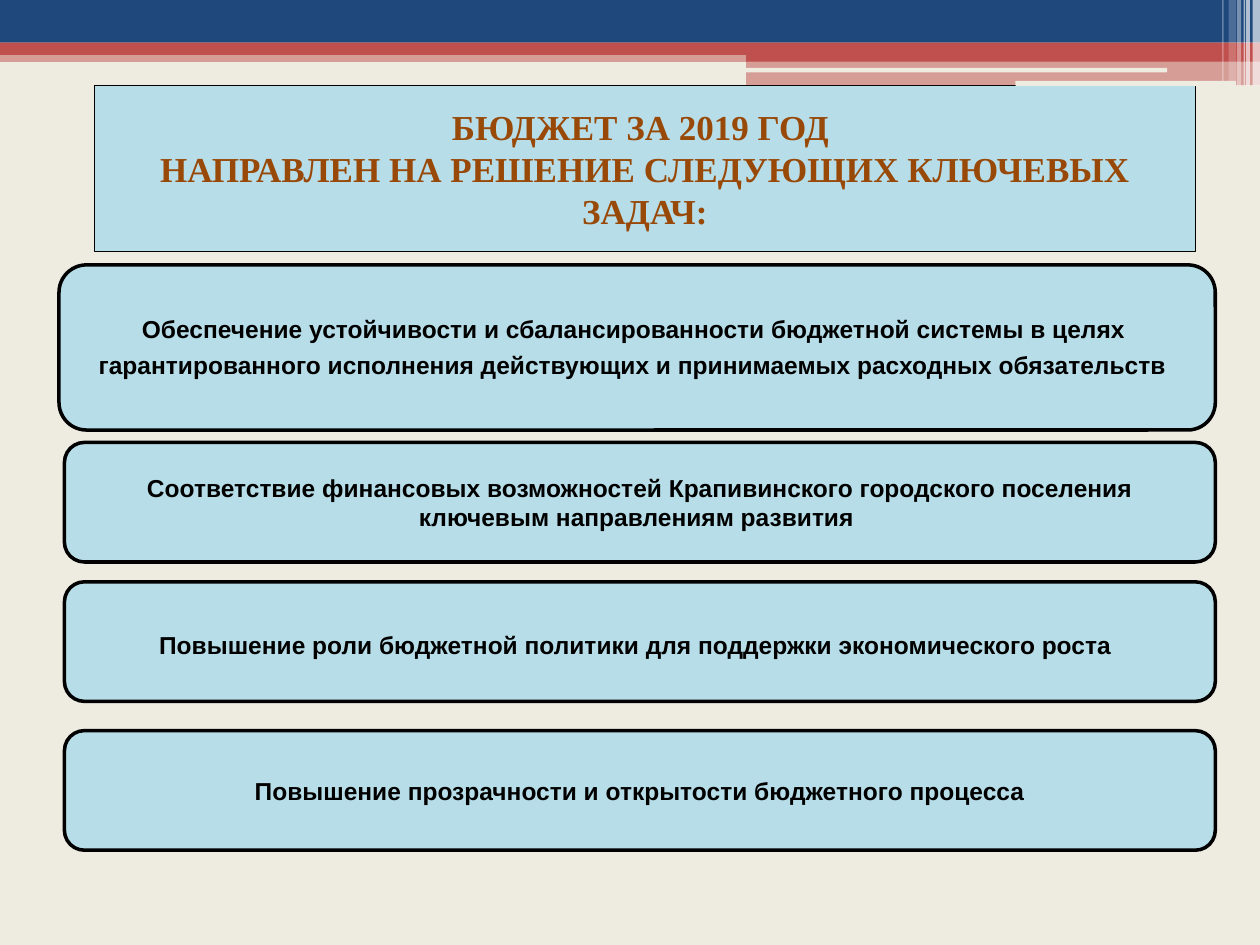
import pptx
import pptx.util
import pptx.dml.color
import pptx.enum.shapes
import pptx.enum.text
import pptx.oxml.ns
import lxml.etree

Cm, Pt = pptx.util.Cm, pptx.util.Pt
MSO_SHAPE = pptx.enum.shapes.MSO_SHAPE
NAVY, RED, CREAM, WHITE = "1F497D", "C0504D", "EEECE1", "FFFFFF"
SKY, BROWN, BLACK = "B7DEE8", "984807", "000000"


def paint(fill, color, alpha=100):
    """Fill with a solid hex colour at the given opacity in percent."""
    fill.solid()
    fill.fore_color.rgb = pptx.dml.color.RGBColor.from_string(color)
    if alpha < 100:
        clr = fill._xPr.find(".//" + pptx.oxml.ns.qn("a:srgbClr"))
        node = lxml.etree.SubElement(clr, pptx.oxml.ns.qn("a:alpha"))
        node.set("val", str(alpha * 1000))


def add_box(s, kind, box, color, alpha=100):
    """Add a flat shape without an outline at a box in centimetres."""
    sp = s.shapes.add_shape(kind, *(Cm(v) for v in box))
    sp.shadow.inherit = False
    paint(sp.fill, color, alpha)
    sp.line.fill.background()
    return sp


def outline(sp, width):
    """Draw a black outline of the given width in points."""
    paint(sp.line.fill, BLACK)
    sp.line.width = Pt(width)


def write(tf, paragraphs, font, color):
    """Write centred, unwrapped paragraphs of (text, size, bold) runs."""
    tf.word_wrap = False
    tf.auto_size = pptx.enum.text.MSO_AUTO_SIZE.NONE
    tf.vertical_anchor = pptx.enum.text.MSO_ANCHOR.MIDDLE
    for i, runs in enumerate(paragraphs):
        p = tf.add_paragraph() if i else tf.paragraphs[0]
        p.alignment = pptx.enum.text.PP_ALIGN.CENTER
        for text, size, bold in runs:
            r = p.add_run()
            r.text = text
            r.font.name = font
            r.font.size = Pt(size)
            r.font.bold = bold
            paint(r.font.fill, color)


def add_banner(s, box):
    """Build the striped band along the top of the slide."""
    left, top, width, height = box
    step = 15.04
    bars = [
        (0, 1.02, width, 0.23, RED, 50),
        (0, 0, width, 0.86, NAVY, 100),
        (0, 0.86, width, 0.25, RED, 100),
        (step, 0.99, width - step, 0.25, RED, 100),
        (step, 1.23, width - step, 0.49, RED, 50),
    ]
    for x, y, w, h, color, alpha in bars:
        add_box(s, MSO_SHAPE.RECTANGLE, (left + x, top + y, w, h), color, alpha)
    for x, y, w, h in [(15.02, 1.37, 8.51, 0.09), (20.47, 1.63, 4.45, 0.1)]:
        add_box(s, MSO_SHAPE.ROUNDED_RECTANGLE, (left + x, top + y, w, h), CREAM)
    stripes = [
        (25.25, 0.15, height, 65),
        (25.12, 0.08, height, 65),
        (25.07, 0.03, height, 60),
        (24.94, 0.08, height, 40),
        (24.77, 0.15, 1.63, 20),
        (24.64, 0.03, 1.63, 30),
    ]
    for x, w, h, alpha in stripes:
        add_box(s, MSO_SHAPE.RECTANGLE, (left + x, top, w, h), WHITE, alpha)


def add_title(s, box):
    """Place the framed heading in the title placeholder."""
    sp = s.shapes.title
    sp.left, sp.top, sp.width, sp.height = (Cm(v) for v in box)
    paint(sp.fill, SKY)
    outline(sp, 0.75)
    lines = ["БЮДЖЕТ ЗА 2019 ГОД ", "НАПРАВЛЕН НА РЕШЕНИЕ СЛЕДУЮЩИХ КЛЮЧЕВЫХ ЗАДАЧ:"]
    write(sp.text_frame, [[(t, 20, True)] for t in lines], "Times New Roman", BROWN)


def add_tasks(s, box):
    """Stack the four rounded task cards within the box."""
    left, top, width, height = box
    inset, low = 0.11, 2.41
    gap = (" ", 18, False)
    cards = [
        (0, 0, 3.33, [
            [("Обеспечение устойчивости и сбалансированности бюджетной системы в целях ", 14, True)],
            [("гарантированного исполнения действующих и принимаемых расходных обязательств", 14, True), gap],
        ]),
        (inset, 3.58, low, [
            [("Соответствие финансовых возможностей Крапивинского городского поселения", 14, True)],
            [("ключевым направлениям развития ", 14, True)],
        ]),
        (inset, 6.39, low, [
            [("Повышение роли бюджетной политики для поддержки экономического роста", 14, True), gap],
        ]),
        (inset, height - low, low, [
            [("Повышение прозрачности и открытости бюджетного процесса", 14, True)],
        ]),
    ]
    for x, y, h, paragraphs in cards:
        card = (left + x, top + y, width - x, h)
        sp = add_box(s, MSO_SHAPE.ROUNDED_RECTANGLE, card, SKY)
        outline(sp, 2)
        write(sp.text_frame, paragraphs, "Arial", BLACK)


def main():
    """Build the slide and save it."""
    prs = pptx.Presentation()
    prs.slide_width, prs.slide_height = Cm(25.4), Cm(19.05)
    s = prs.slides.add_slide(prs.slide_layouts[5])
    paint(s.background.fill, CREAM)
    add_banner(s, (0, 0, 25.4, 1.73))
    add_title(s, (1.9, 1.72, 22.2, 3.35))
    add_tasks(s, (1.19, 5.34, 23.31, 11.8))
    prs.save("out.pptx")


if __name__ == "__main__":
    main()
